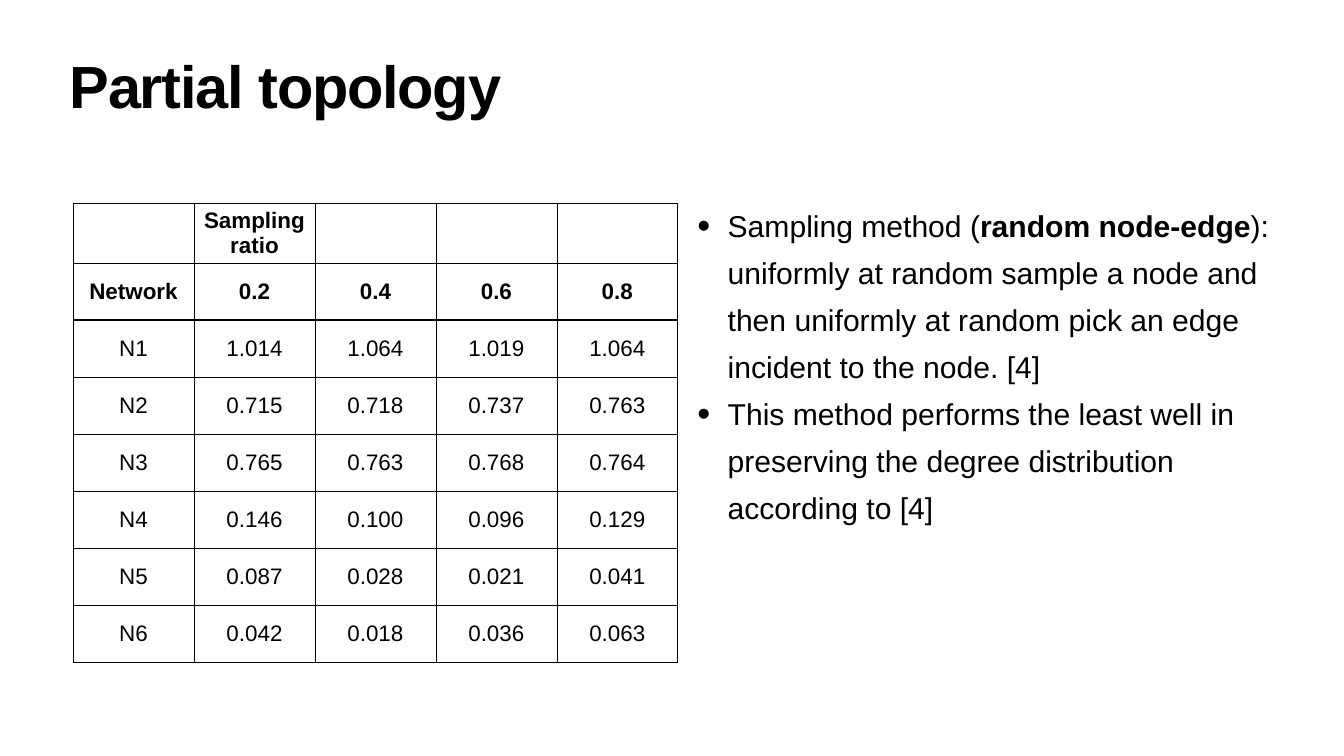
from lxml.etree import SubElement
from pptx import Presentation
from pptx.dml.color import RGBColor
from pptx.enum.text import MSO_ANCHOR, MSO_AUTO_SIZE, PP_ALIGN
from pptx.oxml import parse_xml
from pptx.oxml.ns import nsdecls, qn
from pptx.util import Inches, Pt

BLACK = RGBColor(0x00, 0x00, 0x00)
WHITE = RGBColor(0xFF, 0xFF, 0xFF)
INSET = Inches(0.06)

RATIOS = [
    ["", "Sampling ratio", "", "", ""],
    ["Network", "0.2", "0.4", "0.6", "0.8"],
    ["N1", "1.014", "1.064", "1.019", "1.064"],
    ["N2", "0.715", "0.718", "0.737", "0.763"],
    ["N3", "0.765", "0.763", "0.768", "0.764"],
    ["N4", "0.146", "0.100", "0.096", "0.129"],
    ["N5", "0.087", "0.028", "0.021", "0.041"],
    ["N6", "0.042", "0.018", "0.036", "0.063"],
]
HEADER_ROWS = 2
POINTS = [
    [
        ("Sampling method (", False),
        ("random node-edge", True),
        ("): uniformly at random sample a node and then uniformly at random "
         "pick an edge incident to the node. [4]", False),
    ],
    [("This method performs the least well in preserving the degree "
      "distribution according to [4]", False)],
]


class SlideBuilder:
    """Holds the text style and the slide, and adds each kind of element."""

    def __init__(self, slide, font_name="Arial", color=BLACK):
        self.slide = slide
        self.font_name = font_name
        self.color = color
        slide.background.fill.solid()
        slide.background.fill.fore_color.rgb = WHITE

    def add_run(self, paragraph, text, size, bold=False):
        run = paragraph.add_run()
        run.text = text
        run.font.name = self.font_name
        run.font.size = Pt(size)
        run.font.bold = bold
        run.font.color.rgb = self.color
        return run

    def place(self, shape, left, top, width, height, anchor):
        shape.left, shape.top = Inches(left), Inches(top)
        shape.width, shape.height = Inches(width), Inches(height)
        frame = shape.text_frame
        frame.margin_left = frame.margin_right = INSET
        frame.margin_top = frame.margin_bottom = INSET
        frame.vertical_anchor = anchor
        frame.word_wrap = True
        return frame

    def add_title(self, text, *box):
        frame = self.place(self.slide.shapes.title, *box, MSO_ANCHOR.TOP)
        frame.auto_size = MSO_AUTO_SIZE.NONE
        paragraph = frame.paragraphs[0]
        paragraph.alignment = PP_ALIGN.LEFT
        paragraph.line_spacing = 0.8
        run = self.add_run(paragraph, text, 85, True)
        run.font._element.set("spc", "-170")

    def add_list(self, points, *box):
        frame = self.place(self.slide.placeholders[1], *box, MSO_ANCHOR.MIDDLE)
        frame.auto_size = MSO_AUTO_SIZE.SHAPE_TO_FIT_TEXT
        for index, runs in enumerate(points):
            paragraph = frame.add_paragraph() if index else frame.paragraphs[0]
            paragraph.alignment = PP_ALIGN.LEFT
            paragraph.line_spacing = 1.3
            paragraph.space_before = paragraph.space_after = Pt(0)
            properties = paragraph._p.get_or_add_pPr()
            properties.set("marL", str(Inches(0.6)))
            properties.set("indent", str(Inches(-0.6)))
            SubElement(properties, qn("a:buSzPct"), val="123000")
            SubElement(properties, qn("a:buChar"), char="•")
            for text, bold in runs:
                self.add_run(paragraph, text, 43, bold)

    def add_table(self, rows, header_rows, left, top, column_width, row_height):
        columns = len(rows[0])
        table = self.slide.shapes.add_table(
            len(rows), columns, Inches(left), Inches(top),
            Inches(column_width * columns), Inches(row_height * len(rows)),
        ).table
        table.first_row = table.horz_banding = False
        for column in table.columns:
            column.width = Inches(column_width)
        for row_index, values in enumerate(rows):
            table.rows[row_index].height = Inches(row_height)
            for column_index, text in enumerate(values):
                cell = table.cell(row_index, column_index)
                self.fill_cell(cell, text, row_index < header_rows)
                self.add_borders(
                    cell,
                    top=3 if row_index == header_rows else 1,
                    bottom=3 if row_index == header_rows - 1 else 1,
                )

    def fill_cell(self, cell, text, bold):
        cell.fill.background()
        cell.margin_left = cell.margin_right = INSET
        cell.margin_top = cell.margin_bottom = INSET
        cell.vertical_anchor = MSO_ANCHOR.MIDDLE
        paragraph = cell.text_frame.paragraphs[0]
        paragraph.alignment = PP_ALIGN.CENTER
        if text:
            self.add_run(paragraph, text, 32, bold)

    def add_borders(self, cell, top, bottom):
        properties = cell._tc.get_or_add_tcPr()
        sides = [("lnL", 1), ("lnR", 1), ("lnT", top), ("lnB", bottom)]
        for position, (tag, width) in enumerate(sides):
            properties.insert(position, parse_xml(
                f'<a:{tag} {nsdecls("a")} w="{Pt(width)}"><a:solidFill>'
                f'<a:srgbClr val="{self.color}"/></a:solidFill></a:{tag}>'
            ))


def main():
    presentation = Presentation()
    presentation.slide_width = Inches(26.67)
    presentation.slide_height = Inches(15)
    slide = presentation.slides.add_slide(presentation.slide_layouts[1])
    builder = SlideBuilder(slide)
    builder.add_title("Partial topology", 1.32, 1.18, 24.03, 1.57)
    builder.add_table(RATIOS, HEADER_ROWS, 1.45, 4.04, 2.4, 1.13)
    builder.add_list(POINTS, 13.78, 4.01, 12.15, 6.32)
    presentation.save("out.pptx")


if __name__ == "__main__":
    main()
